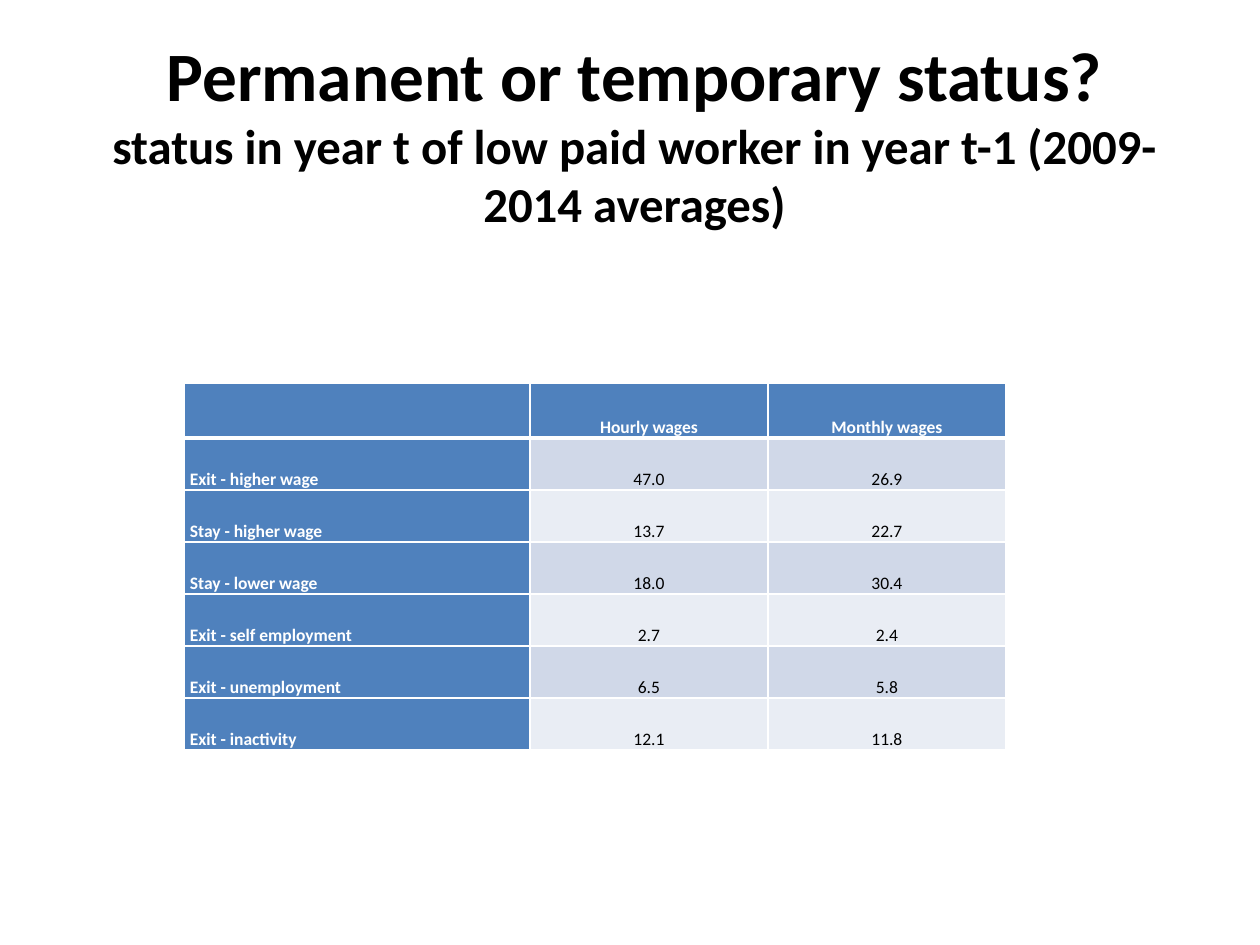
from dataclasses import dataclass

from lxml import etree
from pptx import Presentation
from pptx.dml.color import RGBColor
from pptx.enum.text import MSO_ANCHOR, PP_ALIGN
from pptx.oxml.ns import qn
from pptx.util import Emu, Pt

TOP, BOTTOM = MSO_ANCHOR.TOP, MSO_ANCHOR.BOTTOM
LEFT, CENTER = PP_ALIGN.LEFT, PP_ALIGN.CENTER

# Content
TITLE = "Permanent or temporary status?"
SUBTITLE = "status in year t of low paid worker in year t-1 (2009-2014 averages)"
WAGE_ROWS = [
    ("", "Hourly wages", "Monthly wages"),
    ("Exit - higher wage", "47.0", "26.9"),
    ("Stay - higher wage", "13.7", "22.7"),
    ("Stay - lower wage", "18.0", "30.4"),
    ("Exit - self employment", "2.7", "2.4"),
    ("Exit - unemployment", "6.5", "5.8"),
    ("Exit - inactivity", "12.1", "11.8"),
]

# Layout in px
SLIDE_SIZE = (1260, 945)
TITLE_BOX = (63, 26, 1143, 288)
TABLE_ORIGIN = (184, 383)
COLUMN_WIDTHS = (346, 238, 238)
HEADER_HEIGHT, ROW_HEIGHT = 55, 52
CELL_INSET = 6


@dataclass(frozen=True)
class Theme:
    font: str = "Calibri"
    title_size: float = 39.6
    subtitle_size: float = 27.9
    cell_size: float = 10
    black: str = "000000"
    white: str = "FFFFFF"
    heading: str = "4F81BD"
    bands: tuple = ("D0D8E8", "E9EDF4")
    border: float = 1
    header_border: float = 3
    cell_spacing: float = 1.15


THEME = Theme()


def px(value):
    return Emu(value * 914400 // 126)


def add_run(paragraph, text, size, color, bold):
    run = paragraph.add_run()
    run.text = text
    run.font.name = THEME.font
    run.font.size = Pt(size)
    run.font.bold = bold
    run.font.color.rgb = RGBColor.from_string(color)


def set_borders(cell, bottom_width, top_width):
    properties = cell._tc.get_or_add_tcPr()
    widths = {"a:lnL": THEME.border, "a:lnR": THEME.border,
              "a:lnT": top_width, "a:lnB": bottom_width}
    # Border lines come before the fill in the cell properties
    for index, (tag, width) in enumerate(widths.items()):
        line = etree.Element(qn(tag), w=str(Pt(width)))
        fill = etree.SubElement(line, qn("a:solidFill"))
        etree.SubElement(fill, qn("a:srgbClr"), val=THEME.white)
        properties.insert(index, line)


def add_title(slide):
    box = slide.shapes.add_textbox(*map(px, TITLE_BOX))
    frame = box.text_frame
    frame.word_wrap = True
    frame.vertical_anchor = TOP
    paragraph = frame.paragraphs[0]
    paragraph.alignment = CENTER
    add_run(paragraph, TITLE, THEME.title_size, THEME.black, True)
    paragraph.add_line_break()
    add_run(paragraph, SUBTITLE, THEME.subtitle_size, THEME.black, True)


def fill_cell(cell, text, row, column):
    is_heading = row == 0 or column == 0
    cell.fill.solid()
    color = THEME.heading if is_heading else THEME.bands[(row - 1) % 2]
    cell.fill.fore_color.rgb = RGBColor.from_string(color)
    cell.vertical_anchor = BOTTOM
    cell.margin_left = cell.margin_right = px(CELL_INSET)
    cell.margin_top = cell.margin_bottom = 0
    set_borders(cell,
                THEME.header_border if row == 0 else THEME.border,
                THEME.header_border if row == 1 else THEME.border)
    if text:
        paragraph = cell.text_frame.paragraphs[0]
        paragraph.alignment = CENTER if column else LEFT
        paragraph.line_spacing = THEME.cell_spacing
        add_run(paragraph, text, THEME.cell_size,
                THEME.white if is_heading else THEME.black, is_heading)


def add_wage_table(slide):
    heights = [HEADER_HEIGHT] + [ROW_HEIGHT] * (len(WAGE_ROWS) - 1)
    size = (sum(COLUMN_WIDTHS), sum(heights))
    table = slide.shapes.add_table(len(WAGE_ROWS), len(COLUMN_WIDTHS),
                                   *map(px, TABLE_ORIGIN + size)).table
    table.first_col = True
    for column, width in zip(table.columns, COLUMN_WIDTHS):
        column.width = px(width)
    for row, height in zip(table.rows, heights):
        row.height = px(height)
    for row, texts in enumerate(WAGE_ROWS):
        for column, text in enumerate(texts):
            fill_cell(table.cell(row, column), text, row, column)


def main():
    presentation = Presentation()
    presentation.slide_width, presentation.slide_height = map(px, SLIDE_SIZE)
    slide = presentation.slides.add_slide(presentation.slide_layouts[6])
    add_title(slide)
    add_wage_table(slide)
    presentation.save("out.pptx")


if __name__ == "__main__":
    main()
